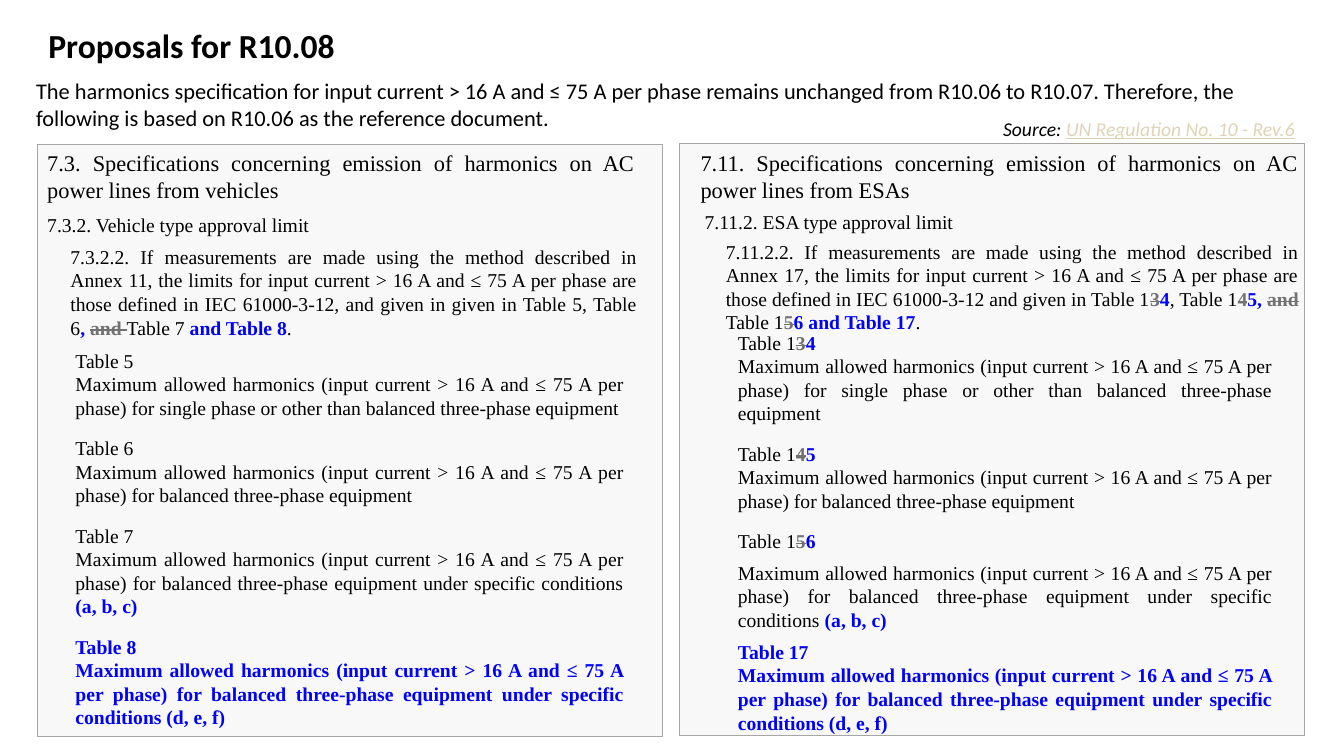
from dataclasses import dataclass

from pptx import Presentation
from pptx.dml.color import RGBColor
from pptx.enum.shapes import MSO_SHAPE as Shape
from pptx.enum.text import MSO_ANCHOR as Anchor, MSO_AUTO_SIZE as AutoSize, PP_ALIGN as Align
from pptx.util import Inches, Pt

COLUMNS, ROWS, CELL = 133.3, 75, 0.1  # grid of tenth-inch cells


@dataclass(frozen=True)
class Theme:
    sans: str = "Calibri"
    serif: str = "Times New Roman"
    text: str = "000000"
    added: str = "0000FF"
    removed: str = "727272"
    link: str = "DED3B6"
    panel: str = "F8F8F8"
    border: str = "A6A6A6"
    title_size: int = 24
    lead_size: int = 16
    body_size: int = 14


def cells(*counts):
    return [Inches(round(count * CELL, 2)) for count in counts]


def added(text):
    return text, "added"


def removed(text):
    return text, "removed"


class SlideBuilder:
    def __init__(self, deck, theme):
        self.theme = theme
        self.page = deck.slides.add_slide(deck.slide_layouts[5])

    def title(self, text, area):
        box = self.page.shapes.title
        box.left, box.top, box.width, box.height = cells(*area)
        frame = box.text_frame
        frame.auto_size, frame.vertical_anchor = AutoSize.NONE, Anchor.TOP
        para = frame.paragraphs[0]
        para.alignment = Align.LEFT
        self.spans(para, [text], self.theme.sans, self.theme.title_size)
        para.runs[0].font.bold = True

    def panel(self, area):
        box = self.page.shapes.add_shape(Shape.RECTANGLE, *cells(*area))
        box.shadow.inherit = False
        box.fill.solid()
        box.fill.fore_color.rgb = RGBColor.from_string(self.theme.panel)
        box.line.color.rgb = RGBColor.from_string(self.theme.border)
        box.line.width = Pt(0.25)

    def frame(self, area):
        frame = self.page.shapes.add_textbox(*cells(*area)).text_frame
        frame.word_wrap = True
        frame.auto_size = AutoSize.SHAPE_TO_FIT_TEXT
        return frame

    def spans(self, para, parts, font, size):
        """Add one run per part; a part is plain text or (text, mark)."""
        for part in parts:
            text, mark = (part, "text") if isinstance(part, str) else part
            span = para.add_run()
            span.text = text
            span.font.name, span.font.size = font, Pt(size)
            span.font.color.rgb = RGBColor.from_string(getattr(self.theme, mark))
            span.font.bold = mark in ("added", "removed")
            span.font.underline = mark == "link"
            if mark == "removed":
                span._r.get_or_add_rPr().set("strike", "sngStrike")

    def note(self, parts, area, size, italic=False):
        para = self.frame(area).paragraphs[0]
        self.spans(para, parts, self.theme.sans, size)
        for span in para.runs:
            span.font.italic = italic

    def legal(self, para, parts, size, before=0, after=0):
        para.alignment = Align.JUSTIFY
        para.space_before, para.space_after = Pt(before), Pt(after)
        self.spans(para, parts, self.theme.serif, size)

    def clause(self, parts, area, size, before=0, exact=None):
        para = self.frame(area).paragraphs[0]
        self.legal(para, parts, size, before, after=6)
        if exact:
            para.line_spacing = Pt(exact)

    def table_list(self, entries, area):
        """List each table's number and caption, with a right indent."""
        frame = self.frame(area)
        size = self.theme.body_size
        for index, (number, caption, before, after) in enumerate(entries):
            para = frame.add_paragraph() if index else frame.paragraphs[0]
            self.legal(para, number, size, before=6)
            caption_para = frame.add_paragraph()
            self.legal(caption_para, caption, size, before, after)
            for item in (para, caption_para):
                item._p.get_or_add_pPr().set("marR", str(Inches(0.8)))


LIMITS = "Maximum allowed harmonics (input current > 16 A and ≤ 75 A per phase) for "
SINGLE = LIMITS + "single phase or other than balanced three-phase equipment"
BALANCED = LIMITS + "balanced three-phase equipment"
SPECIFIC = BALANCED + " under specific conditions"
METHOD = "If measurements are made using the method described in "
CURRENT = ", the limits for input current > 16 A and ≤ 75 A per phase are those defined in "

VEHICLES = {
    "panel": (3.7, 14.3, 62, 58.7),
    "heading": ("7.3. Specifications concerning emission of harmonics on AC power lines from vehicles",
                (3.7, 14.3, 60.2, 6.4)),
    "limit": ("7.3.2. Vehicle type approval limit", (3.7, 21.3, 60.6, 2.7)),
    "clause": (["7.3.2.2. " + METHOD + "Annex 11" + CURRENT
                + "IEC 61000-3-12, and given in given in Table 5, Table 6",
                added(", "), removed("and "), "Table 7 ", added("and Table 8"), "."],
               (6, 23.8, 58.2, 10.4)),
    "tables": ([(["Table 5"], [SINGLE], 0, 6),
                (["Table 6"], [BALANCED], 0, 6),
                (["Table 7"], [SPECIFIC, added(" (a, b, c)")], 0, 6),
                ([added("Table 8")], [added(SPECIFIC + " (d, e, f)")], 0, 6)],
               (6.5, 34.1, 64.4, 39)),
}
ESAS = {
    "panel": (67.4, 14.2, 62, 58.7),
    "heading": ("7.11. Specifications concerning emission of harmonics on AC power lines from ESAs",
                (68.5, 14.3, 61.2, 6.4)),
    "limit": ("7.11.2. ESA type approval limit", (68.9, 21, 38.4, 2.7)),
    "clause": (["7.11.2.2. " + METHOD + "Annex 17" + CURRENT
                + "IEC 61000-3-12 and given in Table 1",
                removed("3"), added("4"), ", Table 1", removed("4"), added("5, "),
                removed("and "), "Table 1", removed("5"), added("6 and Table 17"), "."],
               (71, 23.3, 58.8, 10.4)),
    "tables": ([(["Table 1", removed("3"), added("4")], [SINGLE], 0, 6),
                (["Table 1", removed("4"), added("5")], [BALANCED], 0, 6),
                (["Table 1", removed("5"), added("6")],
                 [SPECIFIC + " ", added("(a, b, c)")], 6, 0),
                ([added("Table 17")], [added(SPECIFIC + " (d, e, f)")], 0, 6)],
               (72.2, 32.3, 63, 41.4)),
}


def main():
    deck = Presentation()
    deck.slide_width, deck.slide_height = cells(COLUMNS, ROWS)
    theme = Theme()
    slide = SlideBuilder(deck, theme)

    slide.title("Proposals for R10.08", (3.8, 2, 106.5, 4.7))
    for section in (VEHICLES, ESAS):
        slide.panel(section["panel"])
        heading, heading_area = section["heading"]
        slide.clause([heading], heading_area, theme.lead_size)
        limit, limit_area = section["limit"]
        slide.clause([limit], limit_area, theme.body_size, exact=12)
        slide.clause(*section["clause"], theme.body_size, before=12)
        slide.table_list(*section["tables"])
    slide.note(["The harmonics specification for input current > 16 A and ≤ 75 A per phase "
                "remains unchanged from R10.06 to R10.07. Therefore, the following is based "
                "on R10.06 as the reference document."],
               (2.6, 7.2, 126.8, 6.4), theme.lead_size)
    slide.note(["Source: ", ("UN Regulation No. 10 - Rev.6", "link")],
               (98.5, 11.1, 32.3, 3.4), theme.body_size, italic=True)

    deck.save("out.pptx")


if __name__ == "__main__":
    main()
